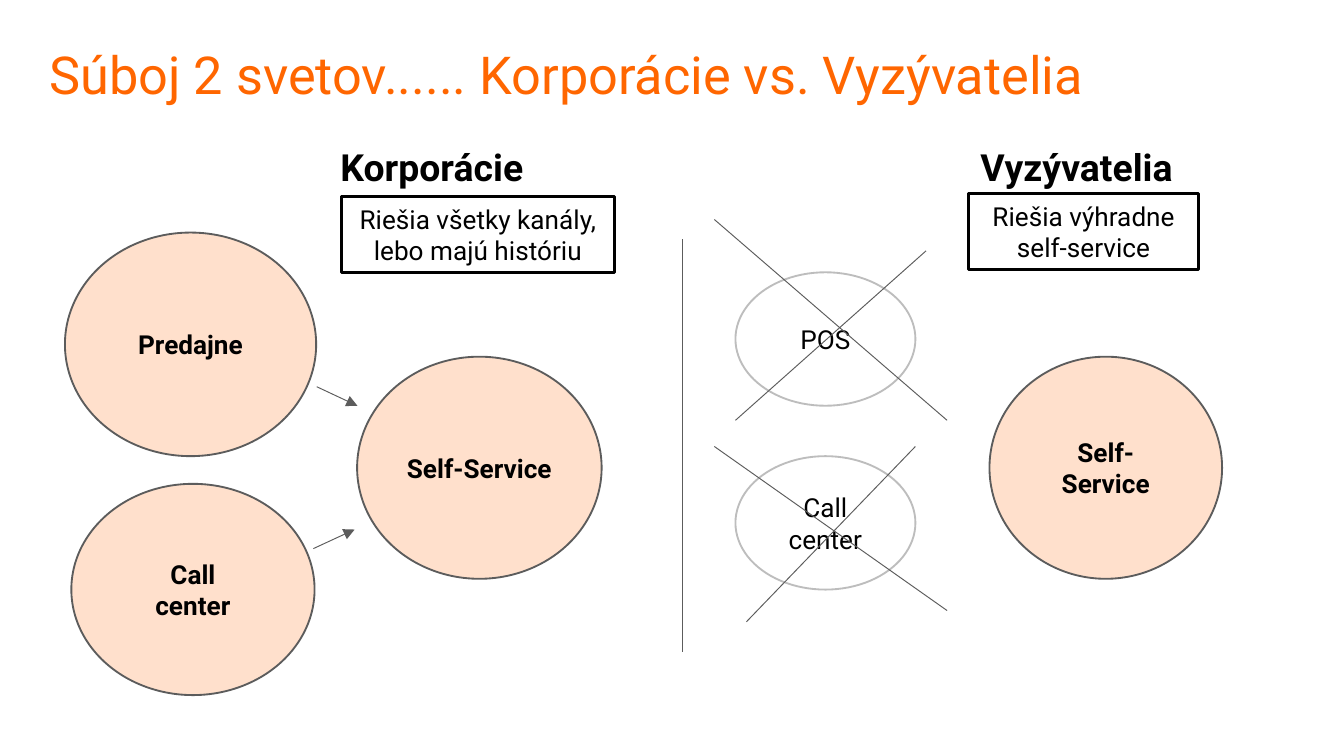
"""Build a slide that contrasts corporations with challengers."""
from lxml import etree
from pptx import Presentation
from pptx.dml.color import RGBColor
from pptx.enum.shapes import MSO_CONNECTOR, MSO_SHAPE
from pptx.enum.text import MSO_ANCHOR, PP_ALIGN
from pptx.oxml.ns import qn
from pptx.util import Pt

OVAL, RECTANGLE = MSO_SHAPE.OVAL, MSO_SHAPE.RECTANGLE
STRAIGHT = MSO_CONNECTOR.STRAIGHT
TOP, MIDDLE = MSO_ANCHOR.TOP, MSO_ANCHOR.MIDDLE
LEFT, CENTER = PP_ALIGN.LEFT, PP_ALIGN.CENTER

THEME = {
    "font": "Roboto",
    "orange": "FF6600", "peach": "FFE0CC", "white": "FFFFFF",
    "black": "000000", "dark": "5C5C5C", "light": "BDBDBD",
    "title": 28, "heading": 20, "body": 14,
}
SLIDE_SIZE = (720, 405)

TITLE = ("Súboj 2 svetov...... Korporácie vs. Vyzývatelia", (26.6, 26.6, 666.7, 49))
HEADINGS = [
    ("Korporácie", (175.2, 73.7, 121, 31.5)),
    ("Vyzývatelia", (518.2, 73.7, 122.5, 31.5)),
]
NOTES = [
    ("Riešia všetky kanály, lebo majú históriu", (183, 105.1, 146, 41)),
    ("Riešia výhradne self-service", (519, 103.6, 123, 41)),
]
ACTIVE_CHANNELS = [
    ("Predajne", (34.8, 124.6, 134.6, 119.8)),
    ("Call\ncenter", (38.2, 259.2, 130.3, 113.2)),
    ("Self-Service", (191.3, 191.1, 131, 119)),
    ("Self-Service", (530.1, 191.1, 124.6, 119)),
]
DROPPED_CHANNELS = [
    ("POS", (394, 145.9, 96.4, 71.5)),
    ("Call\ncenter", (394, 244.4, 96.4, 71.5)),
]
DIVIDER = [((365.8, 128.2), (365.8, 349.2))]
ARROWS = [
    ((169.7, 207.2), (191.5, 217.4)),
    ((167.9, 293.9), (190, 283.7)),
]
CROSSES = [
    ((382.7, 117.6), (507.4, 225.2)),
    ((394, 225.2), (496.1, 134.4)),
    ((382.7, 239.2), (507.4, 327.1)),
    ((399.9, 333.1), (490.4, 239.2)),
]


def color(name):
    return RGBColor.from_string(THEME[name])


def write(shape, text, size="body", ink="black", bold=False, align=CENTER, spacing=None, **frame_format):
    frame = shape.text_frame
    for name, value in {"word_wrap": True, "vertical_anchor": MIDDLE, **frame_format}.items():
        setattr(frame, name, value)
    frame.text = text
    for para in frame.paragraphs:
        para.alignment = align
        para.line_spacing = spacing
        span = para.runs[0].font
        for name, value in {"name": THEME["font"], "size": Pt(THEME[size]), "bold": bold}.items():
            setattr(span, name, value)
        span.color.rgb = color(ink)


def add_text(page, text, place, **text_format):
    write(page.shapes.add_textbox(*map(Pt, place)), text, align=LEFT, vertical_anchor=TOP, **text_format)


def add_box(page, kind, place, fill, line, width=1):
    box = page.shapes.add_shape(kind, *map(Pt, place))
    box.shadow.inherit = False
    box.fill.solid()
    box.fill.fore_color.rgb = color(fill)
    box.line.color.rgb = color(line)
    box.line.width = Pt(width)
    return box


def add_line(page, start, end, arrow=False):
    connector = page.shapes.add_connector(STRAIGHT, *map(Pt, start + end))
    connector.line.color.rgb = color("dark")
    connector.line.width = Pt(0.5)
    if arrow:
        etree.SubElement(connector.line._get_or_add_ln(), qn("a:tailEnd"), type="triangle")
    etree.SubElement(connector._element.spPr, qn("a:effectLst"))


def main():
    deck = Presentation()
    deck.slide_width, deck.slide_height = map(Pt, SLIDE_SIZE)
    page = deck.slides.add_slide(deck.slide_layouts[6])

    margins = dict.fromkeys(("margin_left", "margin_top", "margin_right", "margin_bottom"), 0)
    add_text(page, *TITLE, size="title", ink="orange", spacing=0.9, **margins)

    for channels, fill, line, bold in (
        (ACTIVE_CHANNELS, "peach", "dark", True),
        (DROPPED_CHANNELS, "white", "light", False),
    ):
        for text, place in channels:
            write(add_box(page, OVAL, place, fill, line), text, bold=bold)

    for lines, arrow in ((DIVIDER, False), (ARROWS, True), (CROSSES, False)):
        for start, end in lines:
            add_line(page, start, end, arrow)

    for text, place in HEADINGS:
        add_text(page, text, place, size="heading", bold=True, word_wrap=False)
    for text, place in NOTES:
        write(add_box(page, RECTANGLE, place, "white", "black", 1.5), text)

    deck.save("out.pptx")


if __name__ == "__main__":
    main()
